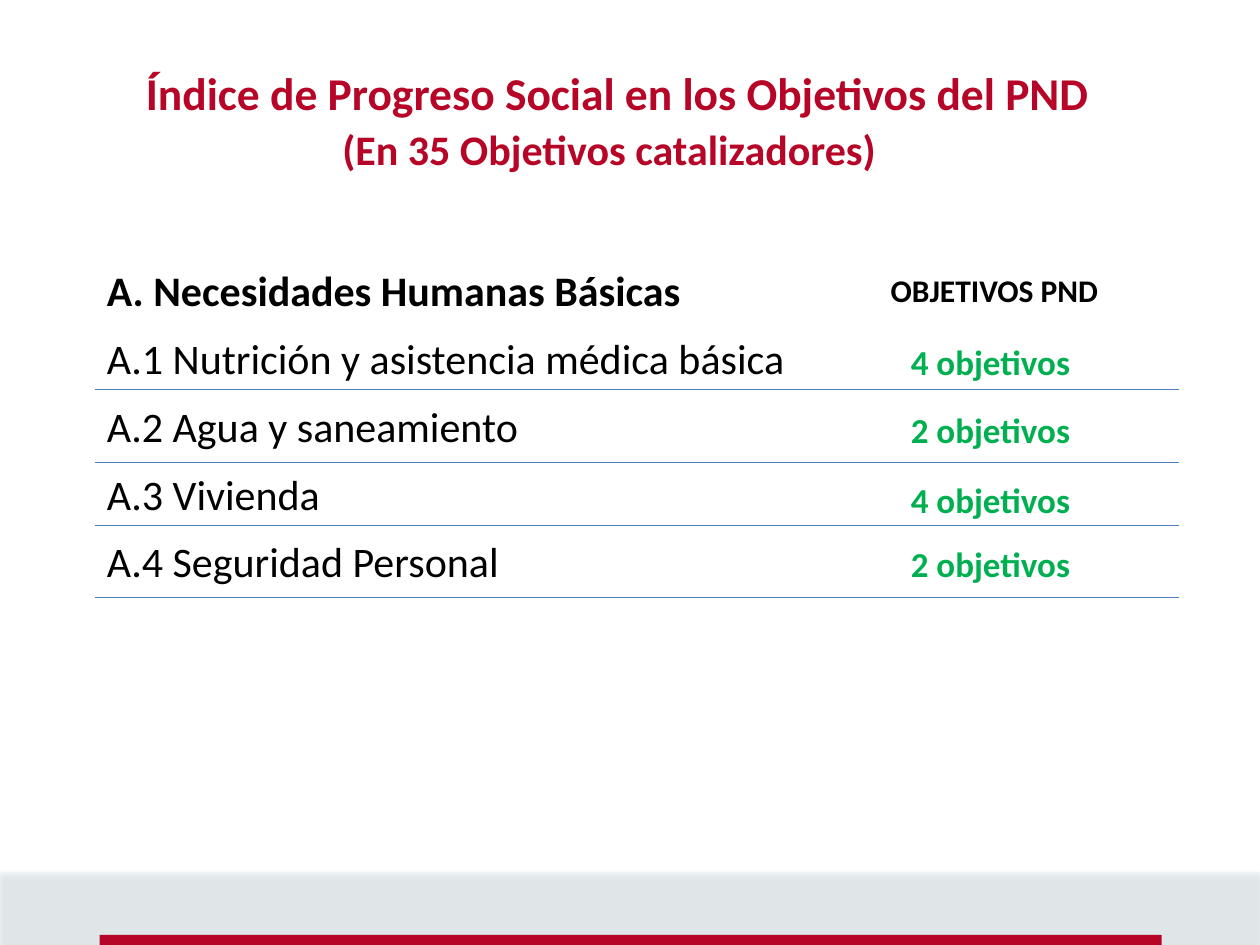
from lxml import etree
from pptx import Presentation
from pptx import util as u
from pptx.dml import color
from pptx.enum import shapes, text
from pptx.oxml import ns

COLORS = {"red": "B60527", "black": "000000", "green": "00B050",
          "line": "4B7EBC", "band": "DBEEF4"}
ROWS = [("A.1 Nutrición y asistencia médica básica", "4 objetivos", 2.65, 3.09),
        ("A.2 Agua y saneamiento", "2 objetivos", 3.19, 3.67),
        ("A.3 Vivienda", "4 objetivos", 3.75, 4.17),
        ("A.4 Seguridad Personal", "2 objetivos", 4.26, 4.74)]


def rgb(name):
    return color.RGBColor.from_string(COLORS[name])


def inches(box):
    return [u.Inches(v) for v in box]


def add_text(s, box, lines, hue, wrap=True, **layout):
    tf = s.shapes.add_textbox(*inches(box)).text_frame
    tf.word_wrap = wrap
    tf.vertical_anchor = text.MSO_ANCHOR.TOP
    for i, (words, size, bold) in enumerate(lines):
        p = tf.paragraphs[0] if i == 0 else tf.add_paragraph()
        for name, value in layout.items():
            setattr(p, name, value)
        r = p.add_run()
        r.text = words
        values = {"name": "Calibri", "size": u.Pt(size), "bold": bold}
        for name, value in values.items():
            setattr(r.font, name, value)
        r.font.color.rgb = rgb(hue)
    return tf


def add_bar(s, box, hue):
    sp = s.shapes.add_shape(shapes.MSO_SHAPE.RECTANGLE, *inches(box))
    sp.shadow.inherit = False
    sp.fill.solid()
    sp.fill.fore_color.rgb = rgb(hue)
    sp.line.fill.background()
    return sp


def add_alpha(parent, percent):
    etree.SubElement(parent, ns.qn("a:alpha"), val=str(percent * 1000))


def add_footer(s, box):
    left, top, width, height = box
    sp = add_bar(s, box, "band")
    add_alpha(sp._element.spPr.find(".//" + ns.qn("a:srgbClr")), 32)
    effects = sp._element.spPr.find(ns.qn("a:effectLst"))
    shadow = etree.SubElement(effects, ns.qn("a:outerShdw"),
                              blurRad=str(u.Pt(3.1)), dist=str(u.Pt(1.8)),
                              dir="5400000", rotWithShape="0")
    hue = etree.SubElement(shadow, ns.qn("a:srgbClr"), val=COLORS["black"])
    add_alpha(hue, 35)
    add_bar(s, (left + 0.79, top + 0.5, width - 1.57, 0.25), "red")


def add_title(s, box):
    lines = [("Índice de Progreso Social en los Objetivos del PND", 26, True),
             ("(En 35 Objetivos catalizadores)", 24, True)]
    tf = add_text(s, box, lines, "red", line_spacing=0.9)
    subtitle = tf.paragraphs[1]
    subtitle.space_before = u.Pt(5)
    subtitle._p.get_or_add_pPr().set("marL", str(u.Inches(1.56)))


def add_rule(s, left, right, y):
    line = s.shapes.add_connector(shapes.MSO_CONNECTOR.STRAIGHT,
                                  *inches((left, y, right, y)))
    line.line.color.rgb = rgb("line")
    line.line.width = u.Pt(0.75)
    etree.SubElement(line._element.spPr, ns.qn("a:effectLst"))


def add_needs(s, box):
    left, top, width, height = box
    lines = [("A. Necesidades Humanas Básicas", 24, True)]
    lines += [(need, 24, False) for need, *_ in ROWS]
    add_text(s, (left, top, 5.91, height), lines, "black",
             line_spacing=1.07, space_after=u.Pt(8))
    add_text(s, (left + 6.22, top + 0.08, 1.86, 0.4),
             [("OBJETIVOS PND", 18, True)], "black", wrap=False)
    for _, count, count_top, rule_y in ROWS:
        add_text(s, (left + 6.38, count_top, 1.48, 0.44),
                 [(count, 20, True)], "green", wrap=False)
        add_rule(s, left, left + width, rule_y)


def main():
    prs = Presentation()
    prs.slide_width, prs.slide_height = inches((10, 7.5))
    s = prs.slides.add_slide(prs.slide_layouts[6])
    add_footer(s, (0, 6.92, 10, 0.58))
    add_title(s, (1.06, 0.52, 8.64, 0.63))
    add_needs(s, (0.75, 2.02, 8.61, 2.71))
    prs.save("out.pptx")


if __name__ == "__main__":
    main()
